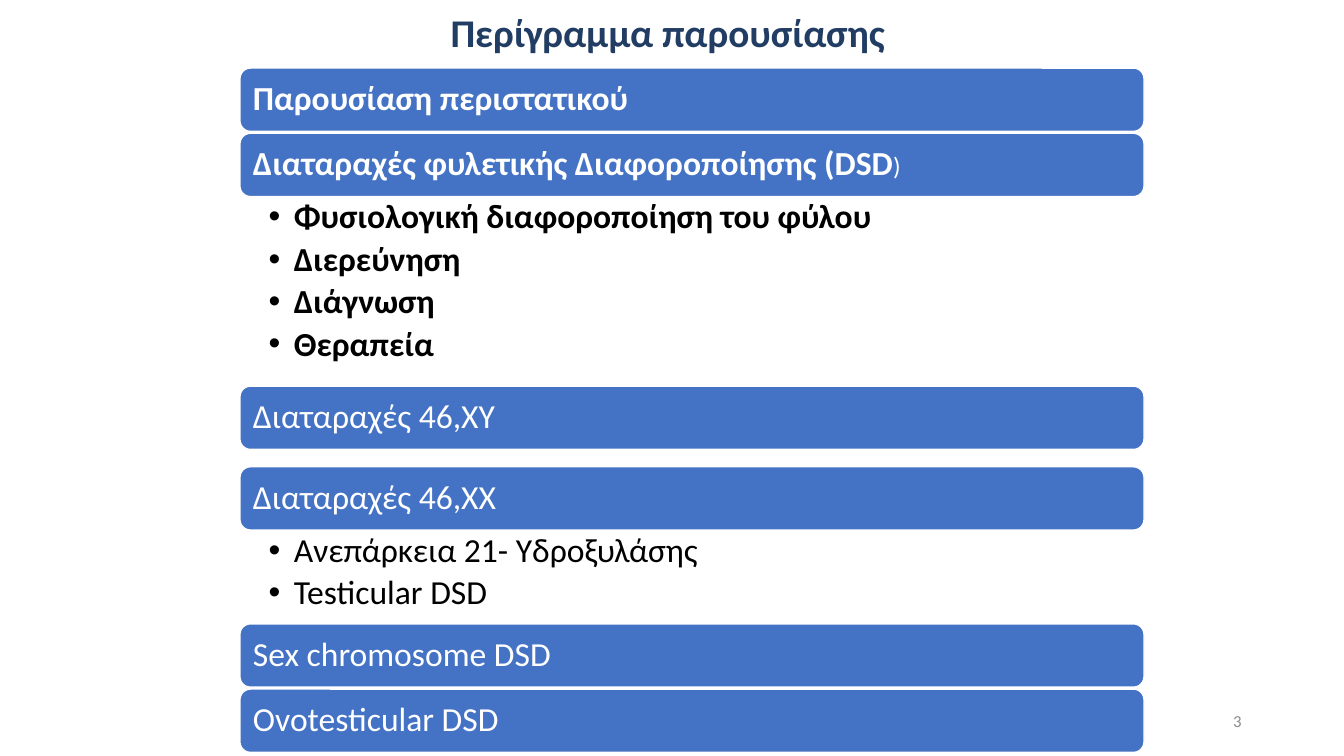
from lxml.etree import SubElement
from pptx import Presentation
from pptx.dml.color import RGBColor
from pptx.enum.shapes import MSO_SHAPE
from pptx.enum.text import MSO_ANCHOR, PP_ALIGN
from pptx.oxml.ns import qn
from pptx.util import Pt

NAVY = RGBColor(0x22, 0x3D, 0x63)
BLUE = RGBColor(0x44, 0x72, 0xC4)
WHITE = RGBColor(0xFF, 0xFF, 0xFF)
BLACK = RGBColor(0, 0, 0)
GREY = RGBColor(0x8C, 0x8C, 0x8C)

BAR_LEFT, BAR_WIDTH, BAR_HEIGHT = 171.4, 645.8, 45.2


def add_span(para, text, size=24, color=BLACK, bold=False):
    span = para.add_run()
    span.text = text
    span.font.name = "Calibri"
    span.font.size = Pt(size)
    span.font.color.rgb = color
    span.font.bold = bold


class Outline:
    """Style and current slide of the outline."""

    def __init__(self, page):
        self.page = page

    def frame(self, box, anchor, insets):
        frame = box.text_frame
        frame.word_wrap = True
        frame.vertical_anchor = anchor
        (frame.margin_left, frame.margin_top,
         frame.margin_right, frame.margin_bottom) = map(Pt, insets)
        return frame

    def text(self, left, top, width, height, text, align, spacing=1, **style):
        box = self.page.shapes.add_textbox(Pt(left), Pt(top), Pt(width), Pt(height))
        para = self.frame(box, MSO_ANCHOR.MIDDLE, (7.2, 3.6, 7.2, 3.6)).paragraphs[0]
        para.alignment = align
        para.line_spacing = spacing
        add_span(para, text, **style)

    def bar(self, top, text, bold=False, tail=""):
        box = self.page.shapes.add_shape(
            MSO_SHAPE.ROUNDED_RECTANGLE,
            Pt(BAR_LEFT), Pt(top), Pt(BAR_WIDTH), Pt(BAR_HEIGHT))
        box.shadow.inherit = False
        box.fill.solid()
        box.fill.fore_color.rgb = BLUE
        box.line.color.rgb = WHITE
        box.line.width = Pt(1)
        para = self.frame(box, MSO_ANCHOR.MIDDLE, (7.2,) * 4).paragraphs[0]
        para.alignment = PP_ALIGN.LEFT
        para.line_spacing = 0.9
        add_span(para, text, color=WHITE, bold=bold)
        if tail:
            add_span(para, tail, size=18, color=WHITE)

    def bullets(self, top, height, items, bold=False):
        box = self.page.shapes.add_textbox(
            Pt(BAR_LEFT), Pt(top), Pt(BAR_WIDTH), Pt(height))
        frame = self.frame(box, MSO_ANCHOR.TOP, (20.5, 2.4, 13.4, 2.4))
        for index, item in enumerate(items):
            para = frame.add_paragraph() if index else frame.paragraphs[0]
            para.line_spacing = 0.9
            para.space_after = Pt(4.4)
            props = para._p.get_or_add_pPr()
            props.set("marL", str(Pt(18)))
            props.set("indent", str(Pt(-18)))
            SubElement(props, qn("a:buFont")).set("typeface", "Arial")
            SubElement(props, qn("a:buChar")).set("char", "•")
            add_span(para, item, bold=bold)


def main():
    deck = Presentation()
    deck.slide_width, deck.slide_height = Pt(960), Pt(540)
    outline = Outline(deck.slides.add_slide(deck.slide_layouts[6]))

    # Title
    outline.text(0, 0, 960, 49.7, "Περίγραμμα παρουσίασης ", PP_ALIGN.CENTER,
                 spacing=0.9, size=28, color=NAVY, bold=True)

    # Case and overview
    outline.bar(48.6, "Παρουσίαση περιστατικού", bold=True)
    outline.bar(95.2, "Διαταραχές φυλετικής Διαφοροποίησης (DSD", bold=True, tail=")")
    outline.bullets(140.4, 135.4, ["Φυσιολογική διαφοροποίηση του φύλου",
                                   "Διερεύνηση", "Διάγνωση", "Θεραπεία"], bold=True)

    # Types of disorder
    outline.bar(275.8, "Διαταραχές 46,ΧΥ")
    outline.bar(333.4, "Διαταραχές 46,ΧΧ")
    outline.bullets(378.6, 67, ["Ανεπάρκεια 21- Υδροξυλάσης", "Testicular DSD"])
    outline.bar(445.6, "Sex chromosome DSD")
    outline.bar(492.2, "Ovotesticular DSD")

    # Page number
    outline.text(678, 500.5, 216, 28.8, "3", PP_ALIGN.RIGHT, size=12, color=GREY)

    deck.save("out.pptx")


if __name__ == "__main__":
    main()
